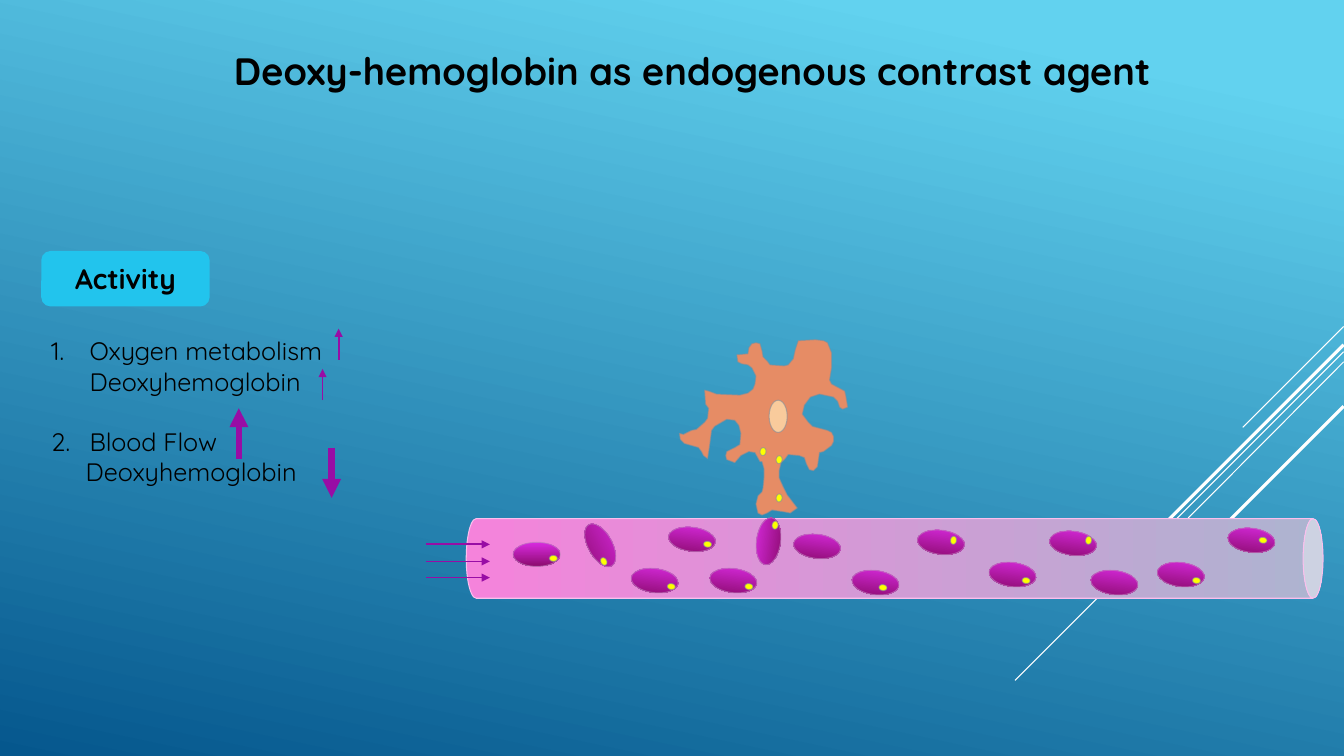
from dataclasses import dataclass

from lxml.etree import SubElement
from pptx import Presentation
from pptx.dml.color import RGBColor
from pptx.enum.shapes import MSO_CONNECTOR as Connector, MSO_SHAPE as Shape
from pptx.enum.text import MSO_ANCHOR as Anchor, PP_ALIGN as Align
from pptx.oxml.ns import qn
from pptx.util import Emu, Pt

PX = 9144  # 100 px to the inch
FONT = "Quicksand"
BLACK, WHITE, PURPLE, YELLOW = "000000", "FFFFFF", "980DA5", "FFFF00"
CELL_EDGE, GREY_EDGE = "BF86BD", "858E99"
CELL_SIZE, DOT_SIZE = (47, 24), (8, 6)
TILT, UPRIGHT = 7.2, 277.6


@dataclass
class Oval:
    left: int
    top: int
    turn: float = TILT


@dataclass
class Line:
    start: tuple[int, int]
    end: tuple[int, int]
    weight: float


@dataclass
class Item:
    text: str
    margin: int
    number: int = 0
    gap: float = 0


STREAKS = [
    Line((1333, 324), (1233, 424), 0.75),
    Line((1333, 349), (1007, 675), 0.75),
    Line((1333, 359), (1126, 567), 0.75),
    Line((1333, 342), (1142, 533), 2.25),
    Line((1333, 403), (1194, 542), 2.25),
]
TREND_ARROWS = [
    Line((336, 357), (336, 326), 1.25),
    Line((320, 397), (320, 366), 1.25),
    Line((237, 455), (237, 405), 4.5),
    Line((329, 444), (329, 494), 4.5),
]
FLOW_ARROWS = [Line((423, y), (486, y), 1.25) for y in (540, 557, 573)]

BLOOD_CELLS = [
    Oval(509, 538, 0), Oval(572, 529, 61.2), Oval(626, 564), Oval(663, 523),
    Oval(739, 525, UPRIGHT), Oval(704, 564), Oval(787, 530), Oval(910, 526),
    Oval(981, 558), Oval(1041, 527), Oval(1148, 558), Oval(1218, 524),
    Oval(1082, 566), Oval(845, 566),
]
OXYGEN_DOTS = [
    Oval(545, 551, 0), Oval(595, 554, 61.2), Oval(662, 579), Oval(698, 537),
    Oval(765, 518, UPRIGHT), Oval(769, 491, UPRIGHT), Oval(769, 453, UPRIGHT),
    Oval(753, 445, UPRIGHT), Oval(739, 579), Oval(1183, 573),
    Oval(1076, 533, UPRIGHT), Oval(942, 533, UPRIGHT), Oval(872, 580),
    Oval(1014, 573), Oval(1249, 533),
]
NEURON = [
    (756, 458), (758, 465), (758, 474), (757, 484), (756, 488), (752, 492), (750, 500),
    (752, 509), (756, 511), (761, 509), (766, 506), (779, 508), (784, 509), (791, 504),
    (781, 491), (777, 483), (773, 474), (773, 467), (775, 459), (779, 455), (782, 451),
    (793, 452), (798, 454), (800, 460), (803, 466), (807, 467), (811, 463), (813, 449),
    (817, 448), (825, 442), (827, 438), (827, 433), (825, 429), (821, 427), (806, 423),
    (802, 419), (796, 411), (798, 402), (804, 394), (813, 391), (827, 394), (831, 398),
    (833, 404), (836, 406), (841, 404), (839, 392), (838, 388), (825, 381), (823, 377),
    (825, 365), (825, 350), (821, 340), (817, 338), (809, 337), (792, 338), (789, 347),
    (787, 356), (782, 362), (778, 363), (764, 362), (761, 358), (757, 354), (756, 348),
    (754, 341), (750, 340), (746, 341), (743, 345), (742, 351), (731, 352), (732, 359),
    (736, 361), (742, 362), (746, 365), (750, 373), (749, 381), (747, 386), (742, 390),
    (734, 392), (711, 391), (703, 388), (699, 387), (700, 401), (703, 405), (702, 415),
    (699, 419), (691, 426), (686, 427), (678, 431), (674, 430), (675, 436), (679, 440),
    (693, 444), (696, 448), (698, 452), (702, 455), (704, 442), (706, 427), (709, 423),
    (721, 416), (729, 417), (733, 422), (735, 430), (734, 441), (729, 444), (721, 448),
    (720, 452), (721, 456), (729, 459), (735, 452), (743, 448), (749, 449), (754, 458),
]
ITEMS = [
    Item("Oxygen metabolism Deoxyhemoglobin", 38, number=1),
    Item("Blood Flow", 38, number=2, gap=21.6),
    Item("Deoxyhemoglobin", 34),
]


def px(length: int) -> Emu:
    return Emu(length * PX)


def rgb(value: str) -> RGBColor:
    return RGBColor.from_string(value)


def paint(fill, first: str, last: str = "", angle: float = 0, begin: float = 0) -> None:
    """Fill solid, or with a gradient at a clockwise angle when last is given."""
    if not last:
        fill.solid()
        fill.fore_color.rgb = rgb(first)
        return
    fill.gradient()
    fill.gradient_angle = (360 - angle) % 360
    for stop, value, position in zip(fill.gradient_stops, (first, last), (begin, 1)):
        stop.color.rgb = rgb(value)
        stop.position = position


def outline(shape, value: str, opacity: int = 100) -> None:
    shape.shadow.inherit = False
    shape.line.color.rgb = rgb(value)
    shape.line.width = Pt(0.75)
    if opacity < 100:
        color = shape.element.spPr.find(qn("a:ln")).find(".//" + qn("a:srgbClr"))
        SubElement(color, qn("a:alpha"), val=str(opacity * 1000))


def add_shape(page, kind, left: int, top: int, width: int, height: int, turn: float = 0):
    shape = page.shapes.add_shape(kind, px(left), px(top), px(width), px(height))
    shape.rotation = turn
    shape.shadow.inherit = False
    return shape


def add_line(page, line: Line, value: str, arrow: bool = False) -> None:
    (x1, y1), (x2, y2) = line.start, line.end
    link = page.shapes.add_connector(Connector.STRAIGHT, px(x1), px(y1), px(x2), px(y2))
    link.line.color.rgb = rgb(value)
    link.line.width = Pt(line.weight)
    if arrow:
        SubElement(link.line._get_or_add_ln(), qn("a:tailEnd"), type="triangle")
    SubElement(link.element.spPr, qn("a:effectLst"))


def add_text(para, text: str, size: float, bold: bool = False) -> None:
    span = para.add_run()
    span.text = text
    span.font.name, span.font.size, span.font.bold = FONT, Pt(size), bold
    span.font.color.rgb = rgb(BLACK)


def add_label(shape, text: str, size: float) -> None:
    frame = shape.text_frame
    frame.word_wrap = True
    frame.vertical_anchor = Anchor.MIDDLE
    para = frame.paragraphs[0]
    para.alignment = Align.CENTER
    add_text(para, text, size, bold=True)


def add_items(page, items: list[Item]) -> None:
    box = page.shapes.add_textbox(px(41), px(328), px(445), px(192))
    frame = box.text_frame
    frame.word_wrap = True
    for index, item in enumerate(items):
        para = frame.add_paragraph() if index else frame.paragraphs[0]
        para.space_before = Pt(item.gap)
        add_text(para, item.text, 18)
        props = para._p.get_or_add_pPr()
        props.set("marL", str(px(item.margin)))
        if item.number:
            props.set("indent", str(-px(item.margin)))
            SubElement(SubElement(props, qn("a:buClr")), qn("a:srgbClr"), val=BLACK)
            SubElement(props, qn("a:buFont"), typeface=FONT)
            SubElement(props, qn("a:buAutoNum"), type="arabicPeriod", startAt=str(item.number))


def main() -> None:
    deck = Presentation()
    deck.slide_width, deck.slide_height = Emu(12192000), px(750)
    page = deck.slides.add_slide(deck.slide_layouts[6])

    # Background and streaks
    paint(page.background.fill, "62D2EF", "05578D", angle=102, begin=0.1)
    for streak in STREAKS:
        add_line(page, streak, WHITE)

    # Title
    title = page.shapes.add_textbox(px(209), px(39), px(956), px(62))
    add_label(title, "Deoxy-hemoglobin as endogenous contrast agent", 27.2)

    # Blood vessel
    vessel = add_shape(page, Shape.CAN, 848, 129, 79, 850, 90)
    vessel.adjustments[0] = 0.25
    paint(vessel.fill, "F583DB", "ADB4D0", angle=270)
    outline(vessel, "FBBFED")

    # Neuron and its nucleus
    builder = page.shapes.build_freeform(*NEURON[0], scale=PX)
    builder.add_line_segments(NEURON[1:], close=True)
    neuron = builder.convert_to_shape()
    nucleus = add_shape(page, Shape.OVAL, 763, 397, 18, 32)
    for part, value in ((neuron, "E68C65"), (nucleus, "F9CB9C")):
        paint(part.fill, value)
        outline(part, GREY_EDGE, 60)

    # Blood cells, then the oxygen on them
    for cell in BLOOD_CELLS:
        oval = add_shape(page, Shape.OVAL, cell.left, cell.top, *CELL_SIZE, cell.turn)
        paint(oval.fill, "D92BE1", "8C0B6E", angle=90)
        outline(oval, CELL_EDGE, 60)
    for dot in OXYGEN_DOTS:
        oval = add_shape(page, Shape.OVAL, dot.left, dot.top, *DOT_SIZE, dot.turn)
        paint(oval.fill, YELLOW)
        outline(oval, GREY_EDGE, 60)

    # Activity heading and list
    heading = add_shape(page, Shape.ROUNDED_RECTANGLE, 41, 249, 167, 55)
    paint(heading.fill, "22C4ED")
    heading.line.fill.background()
    add_label(heading, "Activity", 20)
    add_items(page, ITEMS)

    # Arrows
    for arrow in TREND_ARROWS + FLOW_ARROWS:
        add_line(page, arrow, PURPLE, arrow=True)

    deck.save("out.pptx")


if __name__ == "__main__":
    main()
